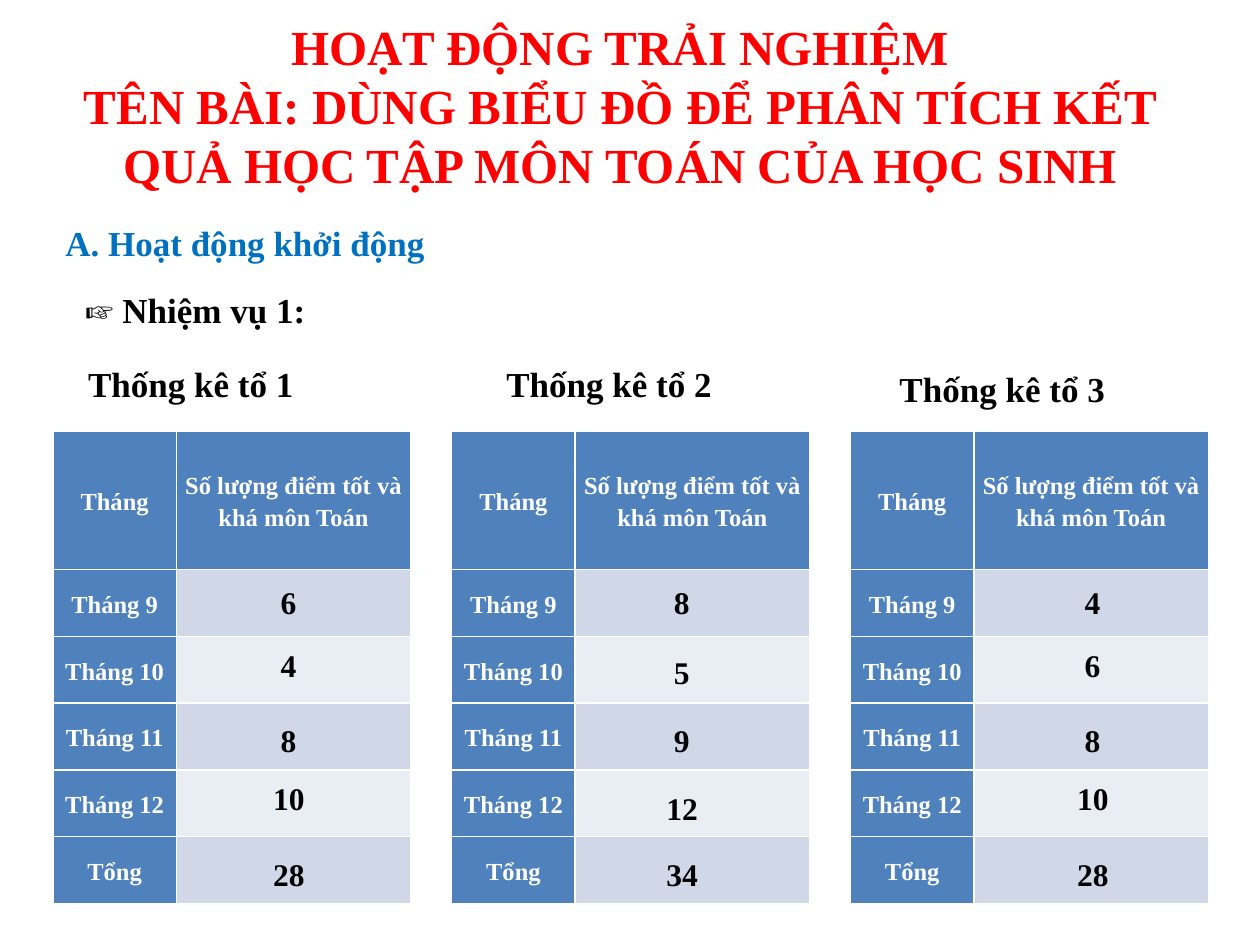
from dataclasses import dataclass
from typing import Any

from pptx import Presentation
from pptx import util as u
from pptx.dml import color
from pptx.enum import text

COLORS = {
    "title": "FF0000",
    "section": "0070C0",
    "body": "000000",
    "header": "4F81BD",
    "header_text": "FFFFFF",
    "odd_row": "D0D8E8",
    "even_row": "E9EDF4",
}
MONTHS = ["Tháng 9", "Tháng 10", "Tháng 11", "Tháng 12", "Tổng"]
COLUMN_WIDTHS = [0.98, 1.86]
HEADER_HEIGHT, ROW_HEIGHT = 1.1, 0.53
TABLE_LEFT, TABLE_TOP, TABLE_STEP = 0.42, 3.42, 3.165
OUTER_TOPS = [4.58, 5.08, 5.67, 6.13, 6.74]
MIDDLE_TOPS = [4.58, 5.13, 5.67, 6.21, 6.74]
TEAMS = [
    ("Thống kê tổ 1", 0.6, 2.83, 2.13, OUTER_TOPS, [6, 4, 8, 10, 28]),
    ("Thống kê tổ 2", 3.92, 2.83, 5.25, MIDDLE_TOPS, [8, 5, 9, 12, 34]),
    ("Thống kê tổ 3", 7.04, 2.87, 8.51, OUTER_TOPS, [4, 6, 8, 10, 28]),
]


@dataclass
class ReportSlide:
    slide: Any
    font: str = "Times New Roman"

    def style(self, paragraph, size, color_name):
        for run in paragraph.runs:
            run.font.name = self.font
            run.font.size = u.Pt(size)
            run.font.bold = True
            run.font.color.rgb = color.RGBColor.from_string(COLORS[color_name])

    def title(self, wording, left, top, width, height):
        heading = self.slide.shapes.title
        heading.left, heading.top = u.Inches(left), u.Inches(top)
        heading.width, heading.height = u.Inches(width), u.Inches(height)
        frame = heading.text_frame
        frame.text = wording
        frame.auto_size = text.MSO_AUTO_SIZE.SHAPE_TO_FIT_TEXT
        frame.vertical_anchor = text.MSO_ANCHOR.TOP
        for paragraph in frame.paragraphs:
            paragraph.alignment = text.PP_ALIGN.CENTER
            self.style(paragraph, 28, "title")

    def label(self, wording, left, top, width=2.38, height=0.44, size=20, color_name="body"):
        box = self.slide.shapes.add_textbox(
            u.Inches(left), u.Inches(top), u.Inches(width), u.Inches(height))
        frame = box.text_frame
        frame.word_wrap = True
        frame.auto_size = text.MSO_AUTO_SIZE.SHAPE_TO_FIT_TEXT
        frame.text = wording
        self.style(frame.paragraphs[0], size, color_name)

    def fill(self, cell, color_name):
        cell.fill.solid()
        cell.fill.fore_color.rgb = color.RGBColor.from_string(COLORS[color_name])

    def header_cell(self, cell, wording):
        self.fill(cell, "header")
        cell.vertical_anchor = text.MSO_ANCHOR.MIDDLE
        cell.margin_left = cell.margin_right = u.Inches(0.07)
        cell.margin_top = cell.margin_bottom = 0
        cell.text = wording
        paragraph = cell.text_frame.paragraphs[0]
        paragraph.alignment = text.PP_ALIGN.CENTER
        paragraph.line_spacing = 1.15
        self.style(paragraph, 14, "header_text")

    def month_table(self, left, top):
        height = HEADER_HEIGHT + ROW_HEIGHT * len(MONTHS)
        table = self.slide.shapes.add_table(
            len(MONTHS) + 1, len(COLUMN_WIDTHS), u.Inches(left), u.Inches(top),
            u.Inches(sum(COLUMN_WIDTHS)), u.Inches(height)).table
        table.first_col = True
        for column, width in zip(table.columns, COLUMN_WIDTHS):
            column.width = u.Inches(width)
        for index, row in enumerate(table.rows):
            row.height = u.Inches(ROW_HEIGHT if index else HEADER_HEIGHT)
        self.header_cell(table.cell(0, 0), "Tháng")
        self.header_cell(table.cell(0, 1), "Số lượng điểm tốt và khá môn Toán")
        for index, month in enumerate(MONTHS, start=1):
            self.header_cell(table.cell(index, 0), month)
            self.fill(table.cell(index, 1), "odd_row" if index % 2 else "even_row")

    def scores(self, left, tops, values):
        for top, value in zip(tops, values):
            shift = 0.06 if value >= 10 else 0
            self.label(str(value), left - shift, top, 0.5, 0.4, 18)


def main():
    deck = Presentation()
    deck.slide_width, deck.slide_height = u.Inches(10), u.Inches(7.5)
    report = ReportSlide(deck.slides.add_slide(deck.slide_layouts[5]))

    report.title(
        "HOẠT ĐỘNG TRẢI NGHIỆM\n"
        "TÊN BÀI: DÙNG BIỂU ĐỒ ĐỂ PHÂN TÍCH KẾT QUẢ HỌC TẬP MÔN TOÁN CỦA HỌC SINH",
        0.42, 0.08, 9, 1.51)
    report.label("A. Hoạt động khởi động", 0.42, 1.71, width=3.37, color_name="section")
    report.label("☞ Nhiệm vụ 1:", 0.58, 2.24)

    for index in range(len(TEAMS)):
        report.month_table(TABLE_LEFT + index * TABLE_STEP, TABLE_TOP)
    for team, left, top, score_left, score_tops, values in TEAMS:
        report.label(team, left, top)
        report.scores(score_left, score_tops, values)

    deck.save("out.pptx")


if __name__ == "__main__":
    main()
